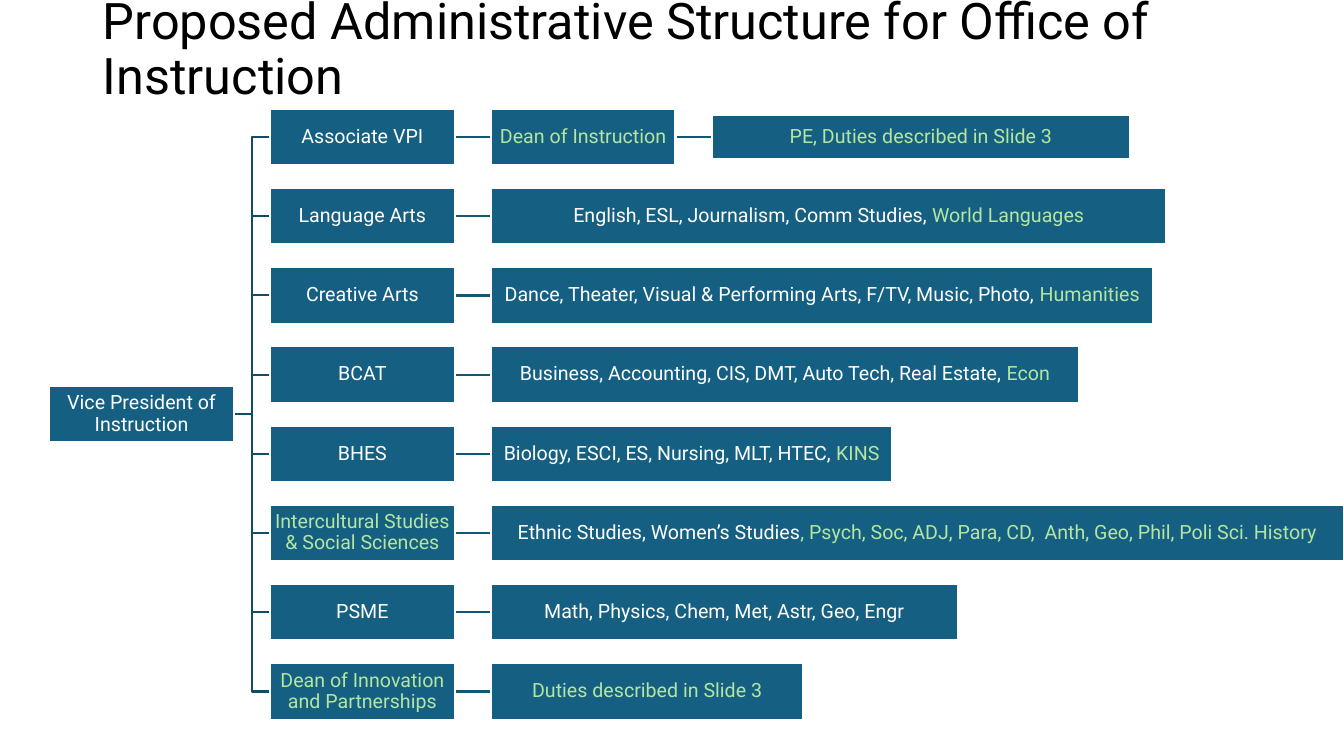
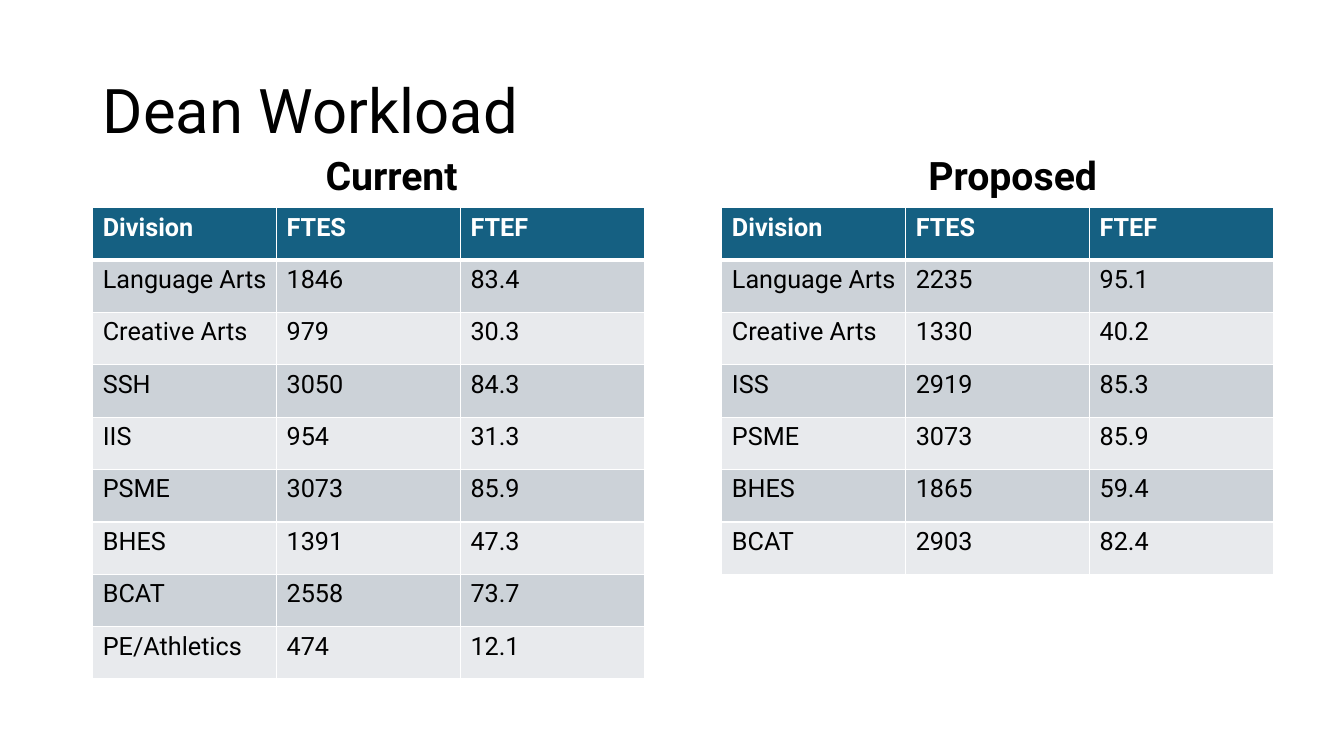
from lxml.etree import SubElement
from pptx import Presentation
from pptx.dml.color import RGBColor
from pptx.enum.shapes import MSO_CONNECTOR as Link, MSO_SHAPE as Preset
from pptx.enum.text import MSO_ANCHOR as Anchor, MSO_AUTO_SIZE as AutoSize, PP_ALIGN as Align
from pptx.oxml import parse_xml
from pptx.oxml.ns import qn
from pptx.util import Inches, Pt

SLIDE_W, SLIDE_H = 13.33, 7.5
FONT = "Roboto"
BLUE, WHITE, BLACK, GREEN = "156082", "FFFFFF", "000000", "B4E5A2"
TRUNK, BRANCH = "114D68", "135776"
BANDS = ["CCD2D8", "E8EAED"]
DRAWING_NS = "http://schemas.openxmlformats.org/drawingml/2006/main"

COLUMN_PITCH, NODE_W, NODE_H = 2.19, 1.83, 0.56

VICE_PRESIDENT = [("Vice President of Instruction", WHITE)]
DIVISIONS = [
    ([("Associate VPI", WHITE)], [
        (NODE_W, NODE_H, [("Dean of Instruction", GREEN)]),
        (4.15, 0.44, [("PE, Duties described in Slide 3", GREEN)])]),
    ([("Language Arts", WHITE)], [
        (6.7, NODE_H, [("English, ESL, Journalism, Comm Studies, ", WHITE),
                       ("World Languages", GREEN)])]),
    ([("Creative Arts", WHITE)], [
        (6.57, NODE_H, [("Dance, Theater, Visual & Performing Arts, F/TV, Music, Photo, ", WHITE),
                        ("Humanities", GREEN)])]),
    ([("BCAT", WHITE)], [
        (5.83, NODE_H, [("Business, Accounting, CIS, DMT, Auto Tech, Real Estate, ", WHITE),
                        ("Econ", GREEN)])]),
    ([("BHES", WHITE)], [
        (3.98, NODE_H, [("Biology, ESCI, ES, Nursing, MLT, HTEC, ", WHITE),
                        ("KINS", GREEN)])]),
    ([("Intercultural Studies & Social Sciences", GREEN)], [
        (8.46, NODE_H, [("Ethnic Studies, Women’s Studies", WHITE),
                        (", Psych, Soc, ADJ, Para, CD,  Anth, Geo, Phil, Poli Sci. History", GREEN)])]),
    ([("PSME", WHITE)], [
        (4.63, NODE_H, [("Math, Physics, Chem, Met, Astr, Geo, Engr", WHITE)])]),
    ([("Dean of Innovation and Partnerships", GREEN)], [
        (3.1, NODE_H, [("Duties described in Slide 3", GREEN)])]),
]

WORKLOAD_HEADER = ("Division", "FTES", "FTEF")
CURRENT = [
    ("Language Arts", "1846", "83.4"),
    ("Creative Arts", "979", "30.3"),
    ("SSH", "3050", "84.3"),
    ("IIS", "954", "31.3"),
    ("PSME", "3073", "85.9"),
    ("BHES", "1391", "47.3"),
    ("BCAT", "2558", "73.7"),
    ("PE/Athletics", "474", "12.1"),
]
PROPOSED = [
    ("Language Arts", "2235", "95.1"),
    ("Creative Arts", "1330", "40.2"),
    ("ISS", "2919", "85.3"),
    ("PSME", "3073", "85.9"),
    ("BHES", "1865", "59.4"),
    ("BCAT", "2903", "82.4"),
]


def rgb(color):
    return RGBColor.from_string(color)


def box(left, top, width, height):
    return [Inches(length) for length in (left, top, width, height)]


def format_run(run, size, color, bold=False):
    run.font.name = FONT
    run.font.size = Pt(size)
    run.font.bold = bold
    run.font.color.rgb = rgb(color)


def titled_slide(deck, wording, area, size):
    slide = deck.slides.add_slide(deck.slide_layouts[5])
    title = slide.shapes.title
    title.left, title.top, title.width, title.height = box(*area)
    frame = title.text_frame
    frame.text = wording
    frame.auto_size = AutoSize.NONE
    frame.vertical_anchor = Anchor.MIDDLE
    heading = frame.paragraphs[0]
    heading.alignment = Align.LEFT
    heading.line_spacing = 0.9
    format_run(heading.runs[0], size, BLACK)
    return slide


def add_node(slide, left, middle, width, height, phrases):
    node = slide.shapes.add_shape(
        Preset.RECTANGLE, *box(left, middle - height / 2, width, height))
    node.shadow.inherit = False
    node.fill.solid()
    node.fill.fore_color.rgb = rgb(BLUE)
    node.line.color.rgb = rgb(WHITE)
    node.line.width = Pt(1.5)
    frame = node.text_frame
    frame.word_wrap = True
    frame.vertical_anchor = Anchor.MIDDLE
    frame.margin_left = frame.margin_right = Inches(0.01)
    frame.margin_top = frame.margin_bottom = Inches(0.01)
    label = frame.paragraphs[0]
    label.alignment = Align.CENTER
    label.line_spacing = 0.9
    for wording, color in phrases:
        run = label.add_run()
        run.text = wording
        format_run(run, 14, color)
    return node


def join(slide, parent, child, kind, color):
    link = slide.shapes.add_connector(kind, 0, 0, 0, 0)
    link.begin_connect(parent, 3)
    link.end_connect(child, 1)
    link.line.color.rgb = rgb(color)
    link.line.width = Pt(1.5)
    SubElement(link.element.spPr, qn("a:effectLst"))
    slide.shapes.element.insert(2, link.element)


def org_chart(slide, left, top, height):
    row_pitch = (height - NODE_H) / (len(DIVISIONS) - 1)
    root = add_node(slide, left, top + height / 2, NODE_W, NODE_H, VICE_PRESIDENT)
    for row, (division, duties) in enumerate(DIVISIONS):
        middle = top + NODE_H / 2 + row * row_pitch
        parent = add_node(slide, left + COLUMN_PITCH, middle, NODE_W, NODE_H, division)
        join(slide, root, parent, Link.ELBOW, TRUNK)
        for column, (width, node_height, phrases) in enumerate(duties, 2):
            duty = add_node(slide, left + column * COLUMN_PITCH, middle,
                            width, node_height, phrases)
            join(slide, parent, duty, Link.STRAIGHT, BRANCH)
            parent = duty


def set_borders(cell, top_width, bottom_width):
    sides = {"lnL": 1, "lnR": 1, "lnT": top_width, "lnB": bottom_width}
    properties = cell._tc.get_or_add_tcPr()
    for position, (side, width) in enumerate(sides.items()):
        properties.insert(position, parse_xml(
            f'<a:{side} xmlns:a="{DRAWING_NS}" w="{Pt(width)}"><a:solidFill>'
            f'<a:srgbClr val="{WHITE}"/></a:solidFill></a:{side}>'))


def workload_panel(slide, left, top, width, caption, caption_shift, caption_width, divisions):
    row_height = 0.52
    rows = [WORKLOAD_HEADER] + divisions
    table = slide.shapes.add_table(
        len(rows), len(WORKLOAD_HEADER),
        *box(left, top, width, row_height * len(rows))).table
    table.horz_banding = False
    for row, values in enumerate(rows):
        header = row == 0
        for column, value in enumerate(values):
            cell = table.cell(row, column)
            cell.text = value
            cell.fill.solid()
            cell.fill.fore_color.rgb = rgb(BLUE if header else BANDS[(row - 1) % 2])
            set_borders(cell, 3 if row == 1 else 1, 3 if header else 1)
            format_run(cell.text_frame.paragraphs[0].runs[0], 18,
                       WHITE if header else BLACK, header)

    heading = slide.shapes.add_textbox(
        *box(left + caption_shift, top - 0.61, caption_width, 0.57)).text_frame
    heading.word_wrap = True
    heading.text = caption
    format_run(heading.paragraphs[0].runs[0], 28, BLACK, True)


def main():
    deck = Presentation()
    deck.slide_width, deck.slide_height = Inches(SLIDE_W), Inches(SLIDE_H)

    structure = titled_slide(
        deck, "Proposed Administrative Structure for Office of Instruction",
        (0.92, -0.22, 12.08, 1.45), 36)
    org_chart(structure, 0.49, 1.08, 6.06)

    workload = titled_slide(deck, "Dean Workload", (0.92, 0.4, 11.5, 1.45), 44)
    workload_panel(workload, 0.92, 2.06, 5.47, "Current", 2.21, 1.58, CURRENT)
    workload_panel(workload, 7.16, 2.06, 5.47, "Proposed", 1.95, 2.13, PROPOSED)

    deck.save("out.pptx")


if __name__ == "__main__":
    main()
